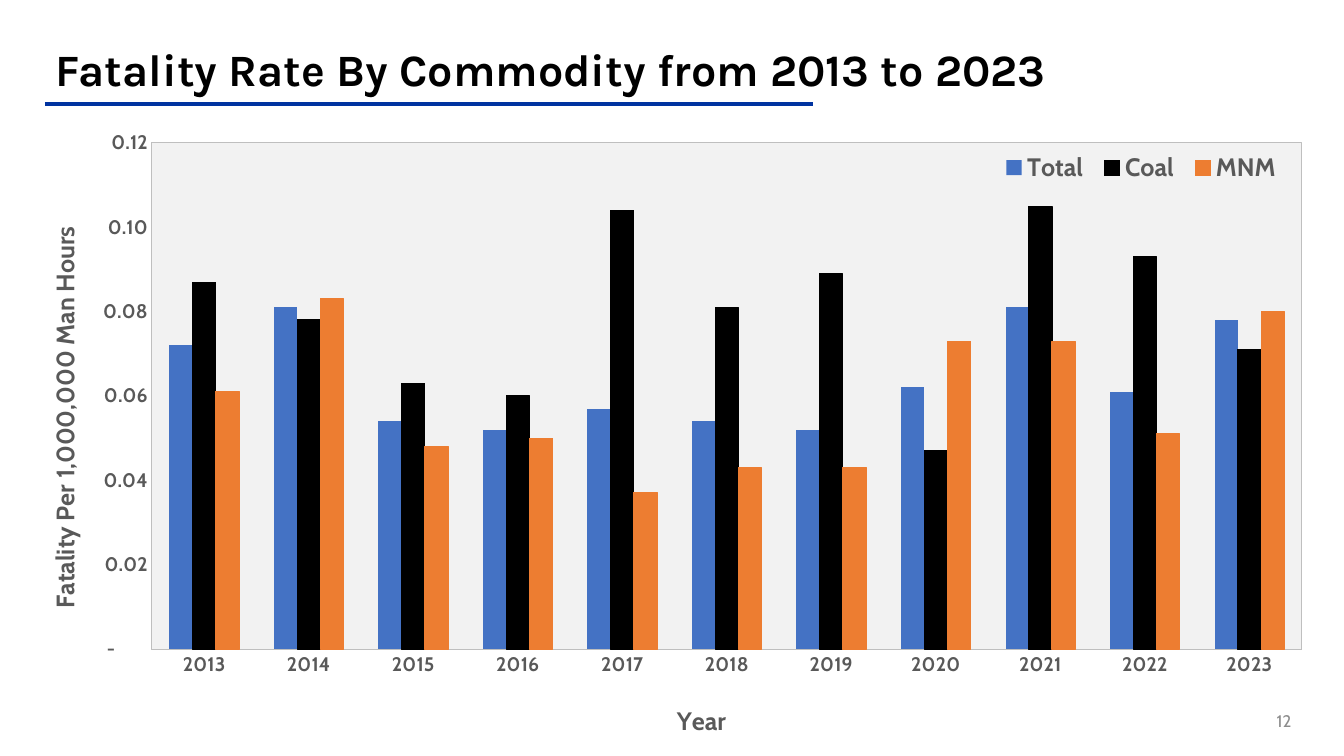
"""Build the slide on fatality rates by commodity from 2013 to 2023."""
import pptx
import pptx.chart.data
import pptx.dml.color
import pptx.enum.chart
import pptx.enum.shapes
import pptx.enum.text
import pptx.oxml
import pptx.oxml.ns
import pptx.util

Pt = pptx.util.Pt
RGBColor = pptx.dml.color.RGBColor
BLACK = RGBColor(0x00, 0x00, 0x00)
BLUE = RGBColor(0x44, 0x72, 0xC4)
ORANGE = RGBColor(0xED, 0x7D, 0x31)
RULE_BLUE = RGBColor(0x00, 0x33, 0xA0)
DARK_GREY = RGBColor(0x59, 0x59, 0x59)
MID_GREY = RGBColor(0x8C, 0x8C, 0x8C)
LINE_GREY = RGBColor(0xBF, 0xBF, 0xBF)
PLOT_GREY = 'F2F2F2'
NS = pptx.oxml.ns.nsdecls('c', 'a')

RATES = {
    'Total': (BLUE, (0.072, 0.081, 0.054, 0.052, 0.057, 0.054, 0.052, 0.062, 0.081, 0.061, 0.078)),
    'Coal': (BLACK, (0.087, 0.078, 0.063, 0.06, 0.104, 0.081, 0.089, 0.047, 0.105, 0.093, 0.071)),
    'MNM': (ORANGE, (0.061, 0.083, 0.048, 0.05, 0.037, 0.043, 0.043, 0.073, 0.073, 0.051, 0.08)),
}


def set_layout(element, index, target='', **place):
    """Place a chart part by fractions of the chart size."""
    for old in element.findall(pptx.oxml.ns.qn('c:layout')):
        element.remove(old)
    modes = ''.join(f'<c:{key}Mode val="edge"/>' for key in 'xy')
    sizes = ''.join(f'<c:{key} val="{value}"/>' for key, value in place.items())
    element.insert(index, pptx.oxml.parse_xml(
        f'<c:layout {NS}><c:manualLayout>{target}{modes}{sizes}</c:manualLayout></c:layout>'))


def style_font(font, name, size, color, bold):
    """Set the face, size, colour and weight of a font."""
    font.name = name
    font.size = Pt(size)
    font.color.rgb = color
    font.bold = bold


prs = pptx.Presentation()
prs.slide_width = Pt(960)
prs.slide_height = Pt(540)
s = prs.slides.add_slide(prs.slide_layouts[6])

rule = s.shapes.add_connector(
    pptx.enum.shapes.MSO_CONNECTOR.STRAIGHT, Pt(32), Pt(74.4), Pt(581), Pt(74.4))
rule.line.color.rgb = RULE_BLUE
rule.line.width = Pt(3)
rule._element.spPr.append(pptx.oxml.parse_xml(f'<a:effectLst {NS}/>'))

chart_data = pptx.chart.data.CategoryChartData()
chart_data.categories = [str(year) for year in range(2013, 2024)]
for name, (color, values) in RATES.items():
    chart_data.add_series(name, values)
chart = s.shapes.add_chart(
    pptx.enum.chart.XL_CHART_TYPE.COLUMN_CLUSTERED,
    Pt(12.2), Pt(85.7), Pt(918), Pt(454.3), chart_data).chart
chart.has_title = False
style_font(chart.font, 'Cabin', 10, BLACK, False)

plot = chart.plots[0]
plot.gap_width = 150
plot.overlap = 0
plot.vary_by_categories = False
for series in plot.series:
    color = RATES[series.name][0]
    series.format.fill.solid()
    series.format.fill.fore_color.rgb = color
    if series.name != 'Total':
        series.format.line.color.rgb = color
        series.format.line.width = Pt(0.75)

plot_area = chart._chartSpace.xpath('c:chart/c:plotArea')[0]
set_layout(plot_area, 0, '<c:layoutTarget val="inner"/>', x=0.105, y=0.036, w=0.895, h=0.796)
plot_area.append(pptx.oxml.parse_xml(
    f'<c:spPr {NS}><a:solidFill><a:srgbClr val="{PLOT_GREY}"/></a:solidFill>'
    f'<a:ln w="9525"><a:solidFill><a:srgbClr val="{LINE_GREY}"/></a:solidFill></a:ln></c:spPr>'))

for axis, title, x, y in (
        (chart.category_axis, 'Year', 0.51, 0.91),
        (chart.value_axis, 'Fatality Per 1,000,000 Man Hours', 0.02, 0.16)):
    axis.has_major_gridlines = False
    axis.major_tick_mark = pptx.enum.chart.XL_TICK_MARK.NONE
    axis.format.line.color.rgb = LINE_GREY
    axis.format.line.width = Pt(0.75)
    style_font(axis.tick_labels.font, 'Cabin', 14, DARK_GREY, True)
    tf = axis.axis_title.text_frame
    tf.text = title
    style_font(tf.paragraphs[0].runs[0].font, 'Cabin', 18, DARK_GREY, True)
    set_layout(axis.axis_title._element, 1, x=x, y=y)

value_axis = chart.value_axis
value_axis.minimum_scale = 0
value_axis.maximum_scale = 0.12
value_axis.major_unit = 0.02
value_axis.tick_labels.number_format = '0.00;-0.00;"-"??_)'
value_axis.tick_labels.number_format_is_linked = False
body = value_axis.axis_title.text_frame._txBody.bodyPr
body.set('rot', '-5400000')
body.set('vert', 'horz')

chart.has_legend = True
legend = chart.legend
legend.position = pptx.enum.chart.XL_LEGEND_POSITION.RIGHT
legend.include_in_layout = False
style_font(legend.font, 'Cabin', 18, DARK_GREY, True)
set_layout(legend._element, 1, x=0.76, y=0.04, w=0.23, h=0.07)

for text, box, name, size, color, bold, align, spacing in (
        ('Fatality Rate By Commodity from 2013 to 2023', (32.4, 28.8, 895, 45.4),
         'Karla', 32, BLACK, True, pptx.enum.text.PP_ALIGN.LEFT, 0.9),
        ('12', (886.3, 500.4, 43.2, 28.8),
         'Cabin', 12, MID_GREY, False, pptx.enum.text.PP_ALIGN.RIGHT, 1)):
    sp = s.shapes.add_textbox(*[Pt(length) for length in box])
    tf = sp.text_frame
    tf.word_wrap = True
    tf.vertical_anchor = pptx.enum.text.MSO_ANCHOR.MIDDLE
    tf.text = text
    p = tf.paragraphs[0]
    p.alignment = align
    p.line_spacing = spacing
    style_font(p.runs[0].font, name, size, color, bold)

prs.save("out.pptx")
